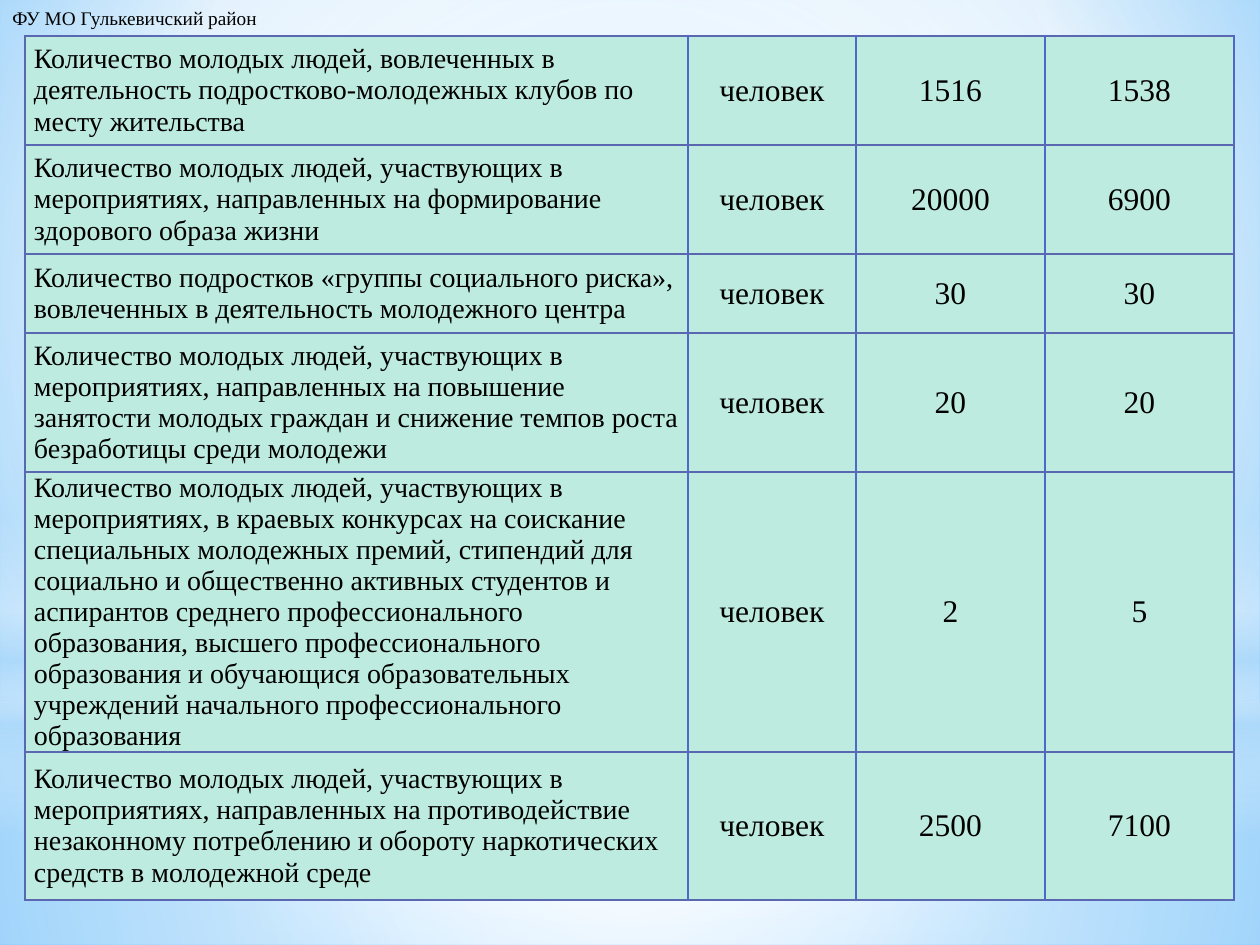
from lxml import etree
from pptx import Presentation
from pptx.dml.color import RGBColor
from pptx.enum.shapes import MSO_SHAPE
from pptx.enum.text import MSO_ANCHOR, MSO_AUTO_SIZE, PP_ALIGN
from pptx.oxml.ns import qn
from pptx.util import Emu, Pt

RECT, OVAL = MSO_SHAPE.RECTANGLE, MSO_SHAPE.OVAL
MIDDLE, LEFT, CENTER = MSO_ANCHOR.MIDDLE, PP_ALIGN.LEFT, PP_ALIGN.CENTER
PX = 914400 / 126

THEME = {
    "font": "Times New Roman", "ink": RGBColor(0, 0, 0),
    "cell": RGBColor.from_string("BEEBDF"),
    "vertical": "4E67C8", "horizontal": "5968B0",
    "white": "FFFFFF", "haze": "B4DCFA", "sky": "9ED5FF", "deep": "5BB9FF",
    "indicator": Pt(16), "value": Pt(18), "district": Pt(11), "border": Pt(1),
}
WHITE, HAZE = THEME["white"], THEME["haze"]


def set_gradient(owner, stops, center=None):
    """Stops are (position, colour, opacity) in percent; no center means top to bottom."""
    gradient = owner.find(".//" + qn("a:gradFill"))
    for child in list(gradient):
        gradient.remove(child)
    stop_list = etree.SubElement(gradient, qn("a:gsLst"))
    for position, color, opacity in stops:
        stop = etree.SubElement(stop_list, qn("a:gs"), pos=str(position * 1000))
        rgb = etree.SubElement(stop, qn("a:srgbClr"), val=color)
        if opacity < 100:
            etree.SubElement(rgb, qn("a:alpha"), val=str(opacity * 1000))
    if center:
        circle = etree.SubElement(gradient, qn("a:path"), path="circle")
        sides = {side: str(share * 1000) for side, share in zip("ltrb", center)}
        etree.SubElement(circle, qn("a:fillToRect"), **sides)
    else:
        etree.SubElement(gradient, qn("a:lin"), ang="5400000", scaled="0")


def add_text(frame, text, size, align):
    paragraph = frame.paragraphs[0]
    paragraph.alignment = align
    run = paragraph.add_run()
    run.text = text
    run.font.name, run.font.size = THEME["font"], size
    run.font.color.rgb = THEME["ink"]


prs = Presentation()
prs.slide_width, prs.slide_height = Emu(round(1260 * PX)), Emu(round(945 * PX))
slide = prs.slides.add_slide(prs.slide_layouts[6])

# Sky background
slide.background.fill.gradient()
set_gradient(slide.element, [(0, THEME["sky"], 100), (60, WHITE, 100),
                             (100, THEME["deep"], 100)], (20, 10, 20, 60))

# Translucent haze, back to front: shape, left, top, width, height, stops, center
MID = (50, 50, 50, 50)
haze_layers = [
    (RECT, 0, 703, 1260, 242, [(0, WHITE, 91), (37, WHITE, 76), (100, HAZE, 79)], MID),
    (RECT, 0, 0, 1260, 703, [(0, WHITE, 89), (48, WHITE, 62), (100, HAZE, 79)], MID),
    (RECT, 0, 519, 1260, 315, [(0, WHITE, 0), (29, WHITE, 30), (45, HAZE, 40),
                               (55, WHITE, 26), (65, HAZE, 60), (100, WHITE, 0)], None),
    (OVAL, 0, 221, 1260, 703, [(0, WHITE, 100), (56, WHITE, 0)], MID),
]
for preset, *box, stops, center in haze_layers:
    layer = slide.shapes.add_shape(preset, *(Emu(round(n * PX)) for n in box))
    layer.shadow.inherit = False
    layer.line.fill.background()
    layer.fill.gradient()
    set_gradient(layer.element, stops, center)

# Indicators: row height, wording, two values
UNIT = "человек"
indicators = [
    (109, "Количество молодых людей, вовлеченных в деятельность "
          "подростково-молодежных клубов по месту жительства", "1516", "1538"),
    (109, "Количество молодых людей, участвующих в мероприятиях, направленных "
          "на формирование здорового образа жизни", "20000", "6900"),
    (79, "Количество подростков «группы социального риска», вовлеченных "
         "в деятельность молодежного центра", "30", "30"),
    (139, "Количество молодых людей, участвующих в мероприятиях, направленных "
          "на повышение занятости молодых граждан и снижение темпов роста "
          "безработицы среди молодежи", "20", "20"),
    (280, "Количество молодых людей, участвующих в мероприятиях, в краевых "
          "конкурсах на соискание специальных молодежных премий, стипендий для "
          "социально и общественно активных студентов и аспирантов среднего "
          "профессионального образования, высшего профессионального образования "
          "и обучающися образовательных учреждений начального профессионального "
          "образования", "2", "5"),
    (148, "Количество молодых людей, участвующих в мероприятиях, направленных "
          "на противодействие незаконному потреблению и обороту наркотических "
          "средств в молодежной среде", "2500", "7100"),
]
column_widths = [663, 168, 189, 189]
table_box = (25, 36, sum(column_widths), sum(row[0] for row in indicators))
table = slide.shapes.add_table(len(indicators), len(column_widths),
                               *(Emu(round(n * PX)) for n in table_box)).table
table.first_row = table.horz_banding = False
for column, width in zip(table.columns, column_widths):
    column.width = Emu(round(width * PX))

for r, (height, indicator, *values) in enumerate(indicators):
    table.rows[r].height = Emu(round(height * PX))
    for c, text in enumerate([indicator, UNIT, *values]):
        cell = table.cell(r, c)
        cell.margin_left = cell.margin_right = Emu(round(9 * PX))
        cell.margin_top = cell.margin_bottom = 0
        cell.vertical_anchor = MIDDLE
        # Borders go before the fill
        for side in "LRTB":
            outer_left = side == "L" and c == 0
            upright = side in "LR" and not outer_left
            border = etree.SubElement(cell._tc.get_or_add_tcPr(), qn("a:ln" + side),
                                      w=str(THEME["border"]))
            paint = etree.SubElement(border, qn("a:solidFill"))
            etree.SubElement(paint, qn("a:srgbClr"),
                             val=THEME["vertical" if upright else "horizontal"])
        cell.fill.solid()
        cell.fill.fore_color.rgb = THEME["cell"]
        size = THEME["value" if c else "indicator"]
        add_text(cell.text_frame, text, size, CENTER if c else LEFT)

# District label
district = slide.shapes.add_textbox(0, 0, Emu(round(275 * PX)), Emu(round(36 * PX)))
district.text_frame.word_wrap = False
district.text_frame.auto_size = MSO_AUTO_SIZE.SHAPE_TO_FIT_TEXT
add_text(district.text_frame, "ФУ МО Гулькевичский район", THEME["district"], LEFT)

prs.save("out.pptx")
